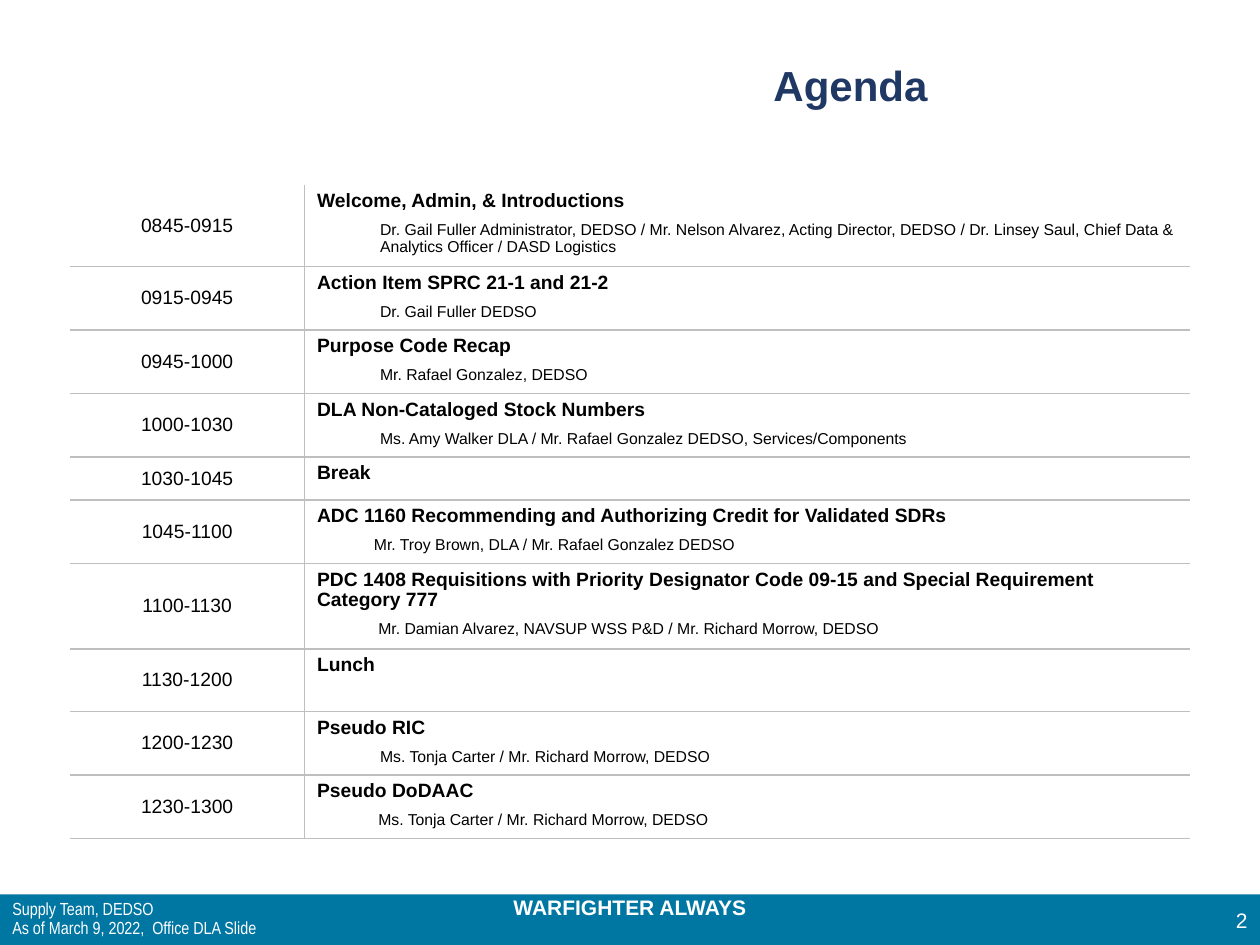
from dataclasses import dataclass

from lxml.etree import SubElement
from pptx import Presentation
from pptx.dml.color import RGBColor as RGB
from pptx.enum.shapes import MSO_SHAPE as SHAPE
from pptx.enum.text import MSO_ANCHOR as ANCHOR, PP_ALIGN as ALIGN
from pptx.oxml.ns import qn
from pptx.util import Pt


@dataclass(frozen=True)
class Theme:
    navy: str = "203864"
    band: str = "0076A3"
    white: str = "FFFFFF"
    ink: str = "000000"
    rule: str = "BFBFBF"
    font: str = "Arial"
    narrow: str = "Arial Narrow"
    title: int = 24
    banner: int = 12
    footer: int = 10
    topic: int = 11
    speaker: int = 9
    plain_table: str = "{2D5ABB26-0587-4C30-8999-92F81FD0307C}"


T = Theme()
WIDTH, HEIGHT = 720, 540
TALL, ROW, SHORT, WRAPPED = 45.5, 35.5, 24.5, 47.5

# Time, topic, speakers, speaker indent, row height
AGENDA = [
    ("0845-0915", "Welcome, Admin, & Introductions",
     "Dr. Gail Fuller Administrator, DEDSO / Mr. Nelson Alvarez, Acting Director, DEDSO / "
     "Dr. Linsey Saul, Chief Data & Analytics Officer / DASD Logistics", 36, TALL),
    ("0915-0945", "Action Item SPRC 21-1 and 21-2", "Dr. Gail Fuller DEDSO", 36, ROW),
    ("0945-1000", "Purpose Code Recap", "Mr. Rafael Gonzalez, DEDSO", 36, ROW),
    ("1000-1030", "DLA Non-Cataloged Stock Numbers",
     "Ms. Amy Walker DLA / Mr. Rafael Gonzalez DEDSO, Services/Components", 36, ROW),
    ("1030-1045", "Break", "", 0, SHORT),
    ("1045-1100", "ADC 1160 Recommending and Authorizing Credit for Validated SDRs",
     "Mr. Troy Brown, DLA / Mr. Rafael Gonzalez DEDSO", 32.5, ROW),
    ("1100-1130", "PDC 1408 Requisitions with Priority Designator Code 09-15 and "
     "Special Requirement Category 777",
     "Mr. Damian Alvarez, NAVSUP WSS P&D / Mr. Richard Morrow, DEDSO", 35, WRAPPED),
    ("1130-1200", "Lunch", "", 0, ROW),
    ("1200-1230", "Pseudo RIC", "Ms. Tonja Carter / Mr. Richard Morrow, DEDSO", 36, ROW),
    ("1230-1300", "Pseudo DoDAAC", "Ms. Tonja Carter / Mr. Richard Morrow, DEDSO", 35, ROW),
]


def write(p, text, size, color=T.ink, font=T.font, bold=False, align=ALIGN.LEFT,
          spacing=None, after=0, indent=0):
    """Fill one paragraph; newlines become line breaks."""
    p.alignment = align
    p.space_after = Pt(after)
    if spacing:
        p.line_spacing = spacing
    if indent:
        p._p.get_or_add_pPr().set("marL", str(Pt(indent)))
    for i, line in enumerate(text.split("\n")):
        if i:
            p.add_line_break()
        r = p.add_run()
        r.text = line
        r.font.name, r.font.size, r.font.bold = font, Pt(size), bold
        r.font.color.rgb = RGB.from_string(color)


def add_label(s, box, text, size, anchor=ANCHOR.TOP, **style):
    tf = s.shapes.add_textbox(*map(Pt, box)).text_frame
    tf.word_wrap = True
    tf.vertical_anchor = anchor
    write(tf.paragraphs[0], text, size, **style)


def rule_cell(cell, *sides):
    """Draw hairlines on the given sides, in schema order."""
    tcPr = cell._tc.get_or_add_tcPr()
    for side in sides:
        ln = SubElement(tcPr, qn(f"a:{side}"), w=str(Pt(1)))
        fill = SubElement(ln, qn("a:solidFill"))
        SubElement(fill, qn("a:srgbClr"), val=T.rule)
    cell.fill.background()


def add_footer(s, box):
    x, y, w, h = box
    band = s.shapes.add_shape(SHAPE.RECTANGLE, *map(Pt, box))
    band.shadow.inherit = False
    band.fill.solid()
    band.fill.fore_color.rgb = RGB.from_string(T.band)
    band.line.fill.background()

    add_label(s, (x, y - 3.5, w, 21.5), "WARFIGHTER ALWAYS", T.banner,
              color=T.white, bold=True, align=ALIGN.CENTER)
    add_label(s, (x + w - 36, y, 36, h), "2", T.banner, ANCHOR.MIDDLE,
              color=T.white, align=ALIGN.RIGHT)
    add_label(s, (x, y, 216, h), "Supply Team, DEDSO\nAs of March 9, 2022,  Office DLA Slide",
              T.footer, ANCHOR.MIDDLE, color=T.white, font=T.narrow, spacing=0.9)


def add_agenda(s, box, time_width):
    x, y, w, h = box
    frame = s.shapes.add_table(len(AGENDA), 2, *map(Pt, box))
    table = frame.table
    table.first_row = table.horz_banding = False
    table._tbl.tblPr.find(qn("a:tableStyleId")).text = T.plain_table
    table.columns[0].width, table.columns[1].width = Pt(time_width), Pt(w - time_width)

    for i, (time, topic, speakers, indent, height) in enumerate(AGENDA):
        table.rows[i].height = Pt(height)
        when, what = table.cell(i, 0), table.cell(i, 1)
        when.vertical_anchor = ANCHOR.MIDDLE
        write(when.text_frame.paragraphs[0], time, T.topic, align=ALIGN.CENTER)
        tf = what.text_frame
        write(tf.paragraphs[0], topic, T.topic, bold=True, spacing=0.96,
              after=6 if speakers else 0)
        if speakers:
            write(tf.add_paragraph(), speakers, T.speaker, spacing=0.96, indent=indent)
        top = ["lnT"] if i else []
        rule_cell(when, "lnR", *top, "lnB")
        rule_cell(what, "lnL", *top, "lnB")


def main():
    prs = Presentation()
    prs.slide_width, prs.slide_height = Pt(WIDTH), Pt(HEIGHT)
    s = prs.slides.add_slide(prs.slide_layouts[6])
    add_footer(s, (0, 511, WIDTH, 29))
    add_label(s, (288, 30.5, 396, 65), "Agenda", T.title,
              color=T.navy, bold=True, align=ALIGN.CENTER)
    add_agenda(s, (40, 105.5, 640, sum(row[-1] for row in AGENDA)), time_width=134)
    prs.save("out.pptx")


if __name__ == "__main__":
    main()
